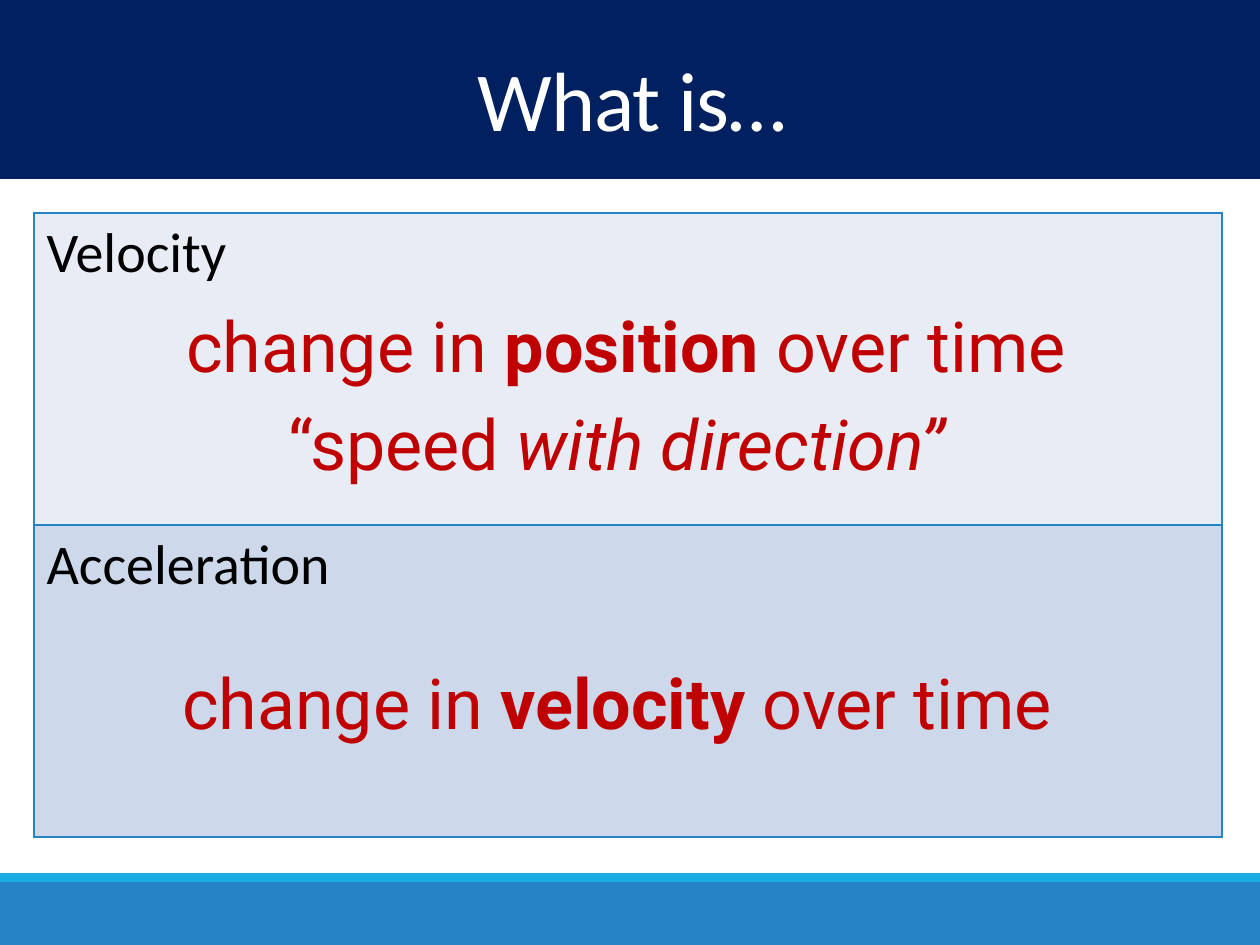
from dataclasses import dataclass

from lxml import etree
from pptx import Presentation
from pptx import util as u
from pptx.dml.color import RGBColor
from pptx.enum import shapes, text
from pptx.oxml.ns import qn

PX = 914400 / 126


@dataclass(frozen=True)
class Theme:
    """Colours, fonts and type sizes of the slide."""
    navy: str = "002060"
    blue: str = "2683C6"
    cyan: str = "1CADE4"
    white: str = "FFFFFF"
    black: str = "000000"
    red: str = "C00000"
    rows: tuple = ("E8EDF5", "CDD9EA")
    label_face: str = "Calibri"
    answer_face: str = "Roboto"
    title_size: int = 48
    term_size: int = 32
    answer_size: int = 40


THEME = Theme()


def emu(*lengths):
    """Turn px lengths into EMU."""
    return [u.Emu(round(length * PX)) for length in lengths]


def style(font, face, size, colour):
    """Set the face, size and colour of a font."""
    font.name, font.size = face, u.Pt(size)
    font.color.rgb = RGBColor.from_string(colour)


def add_band(slide, box, colour):
    """Draw a plain filled rectangle."""
    band = slide.shapes.add_shape(shapes.MSO_SHAPE.RECTANGLE, *emu(*box))
    band.shadow.inherit = False
    band.fill.solid()
    band.fill.fore_color.rgb = RGBColor.from_string(colour)
    band.line.fill.background()


def add_footer(slide, box):
    """Draw the footer with its thin stripe on top."""
    left, top, width, height = box
    stripe = 9
    add_band(slide, (left, top + stripe, width, height - stripe), THEME.blue)
    add_band(slide, (left, top, width, stripe), THEME.cyan)


def add_header(slide, box, heading):
    """Draw the banner and set the title over it."""
    left, top, width, height = box
    add_band(slide, box, THEME.navy)
    title = slide.shapes.title
    slide.shapes._spTree.append(title._element)
    title.left, title.top, title.width, title.height = emu(
        left + 4, top + 53, width - 4, 106)
    frame = title.text_frame
    frame.text = heading
    frame.vertical_anchor = text.MSO_ANCHOR.MIDDLE
    paragraph = frame.paragraphs[0]
    paragraph.alignment = text.PP_ALIGN.CENTER
    paragraph.line_spacing = 0.85
    style(paragraph.font, THEME.label_face, THEME.title_size, THEME.white)
    paragraph.runs[0].font._element.set("spc", "-50")


def add_borders(cell):
    """Outline a cell on all four sides."""
    properties = cell._tc.get_or_add_tcPr()
    for position, side in enumerate(("a:lnL", "a:lnR", "a:lnT", "a:lnB")):
        line = etree.Element(qn(side), w=str(u.Pt(1)))
        fill = etree.SubElement(line, qn("a:solidFill"))
        etree.SubElement(fill, qn("a:srgbClr"), val=THEME.blue)
        properties.insert(position, line)


def add_answer(slide, box, pieces):
    """Write one definition line from (text, bold, italic) pieces."""
    frame = slide.shapes.add_textbox(*emu(*box)).text_frame
    frame.word_wrap = False
    frame.auto_size = text.MSO_AUTO_SIZE.SHAPE_TO_FIT_TEXT
    paragraph = frame.paragraphs[0]
    style(paragraph.font, THEME.answer_face, THEME.answer_size, THEME.red)
    for words, bold, italic in pieces:
        run = paragraph.add_run()
        run.text = words
        run.font.bold, run.font.italic = bold, italic


def add_definitions(slide, box, definitions):
    """Build the table of terms and lay each row's answers over it."""
    left, top, width, height = box
    table = slide.shapes.add_table(len(definitions), 1, *emu(*box)).table
    table.first_row = table.horz_banding = False
    row_height = height / len(definitions)
    for index, (term, answers) in enumerate(definitions):
        table.rows[index].height = emu(row_height)[0]
        cell = table.cell(index, 0)
        cell.text = term
        cell.fill.solid()
        cell.fill.fore_color.rgb = RGBColor.from_string(THEME.rows[index])
        style(cell.text_frame.paragraphs[0].font,
              THEME.label_face, THEME.term_size, THEME.black)
        add_borders(cell)
        row_top = top + index * row_height
        for (dx, dy, answer_width), pieces in answers:
            add_answer(slide, (left + dx, row_top + dy, answer_width, 97), pieces)


def change_over_time(quantity):
    """Return the pieces of a rate-of-change definition."""
    return [("change in ", False, False), (quantity, True, False),
            (" over time", False, False)]


def main():
    """Build and save the slide."""
    deck = Presentation()
    deck.slide_width, deck.slide_height = emu(1260, 945)
    slide = deck.slides.add_slide(deck.slide_layouts[5])
    add_footer(slide, (0, 873, 1260, 72))
    add_header(slide, (0, 0, 1260, 179), "What is…")
    speed = [("“speed ", False, False), ("with direction”", False, True)]
    add_definitions(slide, (34, 213, 1188, 624), [
        ("Velocity", [((140, 83, 935), change_over_time("position")),
                      ((242, 181, 713), speed)]),
        ("Acceleration", [((136, 128, 922), change_over_time("velocity"))]),
    ])
    deck.save("out.pptx")


if __name__ == "__main__":
    main()
